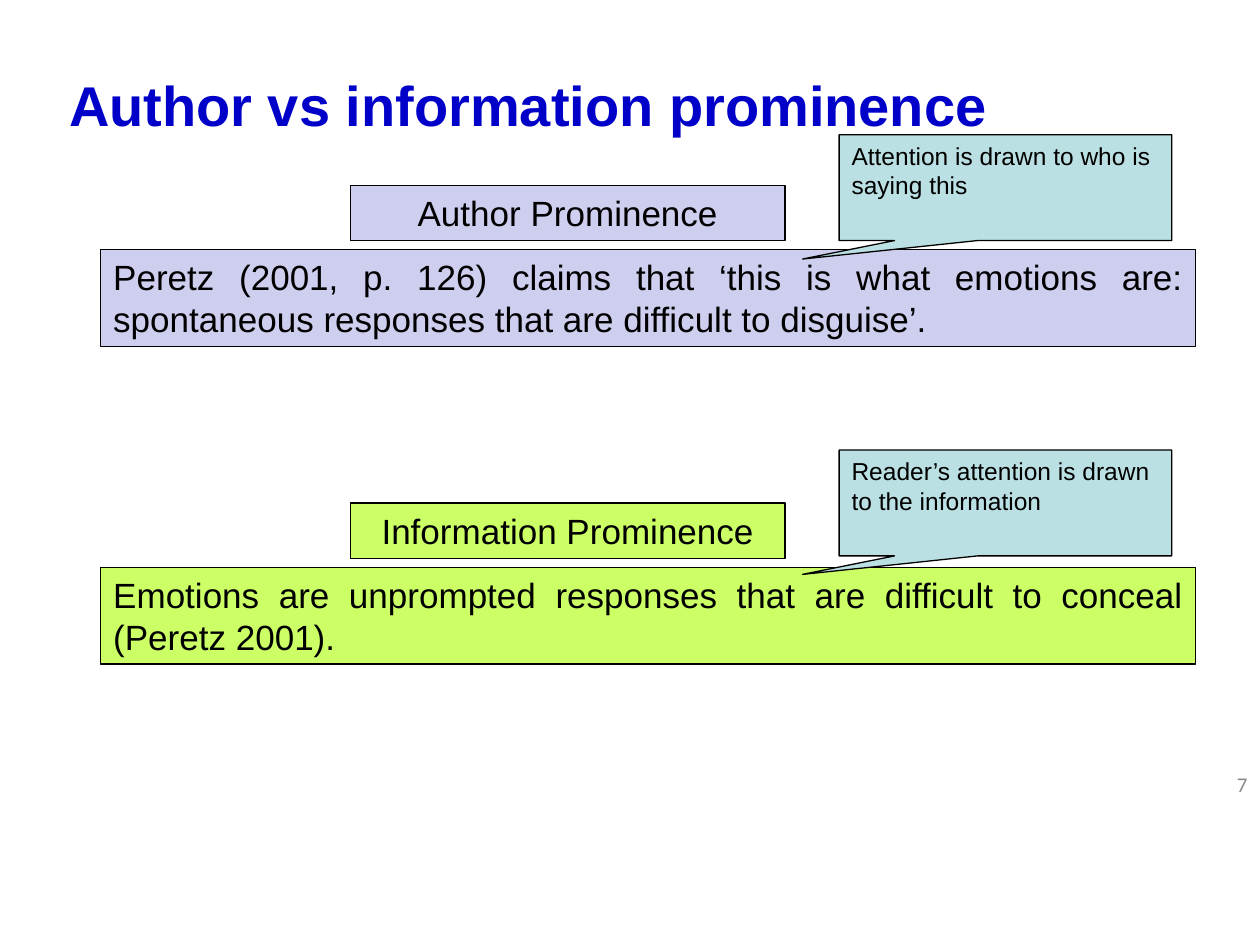
from pptx import Presentation
from pptx.dml.color import RGBColor
from pptx.enum import shapes, text
from pptx.util import Pt

BLACK = "000000"
LAVENDER, LIME, TEAL = "CECEEF", "CCFF66", "BBE0E3"
RECT = shapes.MSO_SHAPE.RECTANGLE
CALLOUT = shapes.MSO_SHAPE.RECTANGULAR_CALLOUT
ALIGN, ANCHOR = text.PP_ALIGN, text.MSO_ANCHOR


def rgb(value):
    return RGBColor.from_string(value)


def set_text(sp, words, size, color=BLACK, font="Arial", bold=False,
             align=ALIGN.LEFT, anchor=ANCHOR.TOP):
    tf = sp.text_frame
    tf.word_wrap = True
    tf.vertical_anchor = anchor
    tf.text = words
    p = tf.paragraphs[0]
    p.alignment = align
    r = p.runs[0]
    r.font.name, r.font.size, r.font.bold = font, Pt(size), bold
    r.font.color.rgb = rgb(color)


def add_text(s, box, words, size, **style):
    sp = s.shapes.add_textbox(*map(Pt, box))
    set_text(sp, words, size, **style)


def add_box(s, kind, box, fill, words, size, align=ALIGN.LEFT):
    sp = s.shapes.add_shape(kind, *map(Pt, box))
    sp.shadow.inherit = False
    sp.fill.solid()
    sp.fill.fore_color.rgb = rgb(fill)
    sp.line.color.rgb = rgb(BLACK)
    sp.line.width = Pt(0.75)
    set_text(sp, words, size, align=align)
    return sp


def add_example(s, top, callout_top, fill, label, sentence, note):
    """Heading, example sentence and the callout that points at it."""
    add_box(s, RECT, (57.6, top + 36.7, 625.7, 55.4), fill, sentence, 20,
            ALIGN.JUSTIFY)
    add_box(s, RECT, (200.2, top, 248.4, 31.7), fill, label, 20, ALIGN.CENTER)
    callout = add_box(s, CALLOUT, (479.5, callout_top, 190, 60.5), TEAL,
                      note, 14)
    callout.adjustments[0] = -0.61
    callout.adjustments[1] = 0.675


def main():
    prs = Presentation()
    prs.slide_width, prs.slide_height = Pt(720), Pt(540)
    s = prs.slides.add_slide(prs.slide_layouts[6])

    # Title and page number
    add_text(s, (32.4, 33.8, 650, 51), "Author vs information prominence", 32,
             color="0000C8", bold=True, anchor=ANCHOR.MIDDLE)
    add_text(s, (552, 433.5, 168, 28.8), "7", 12, color="898989",
             font="Calibri", align=ALIGN.RIGHT, anchor=ANCHOR.MIDDLE)

    # The two kinds of prominence
    add_example(s, 105.9, 77, LAVENDER, "Author Prominence",
                "Peretz (2001, p. 126) claims that ‘this is what emotions are: "
                "spontaneous responses that are difficult to disguise’.",
                "Attention is drawn to who is saying this")
    add_example(s, 287.4, 257.2, LIME, "Information Prominence",
                "Emotions are unprompted responses that are difficult to "
                "conceal (Peretz 2001).",
                "Reader’s attention is drawn to the information")

    prs.save("out.pptx")


if __name__ == "__main__":
    main()
